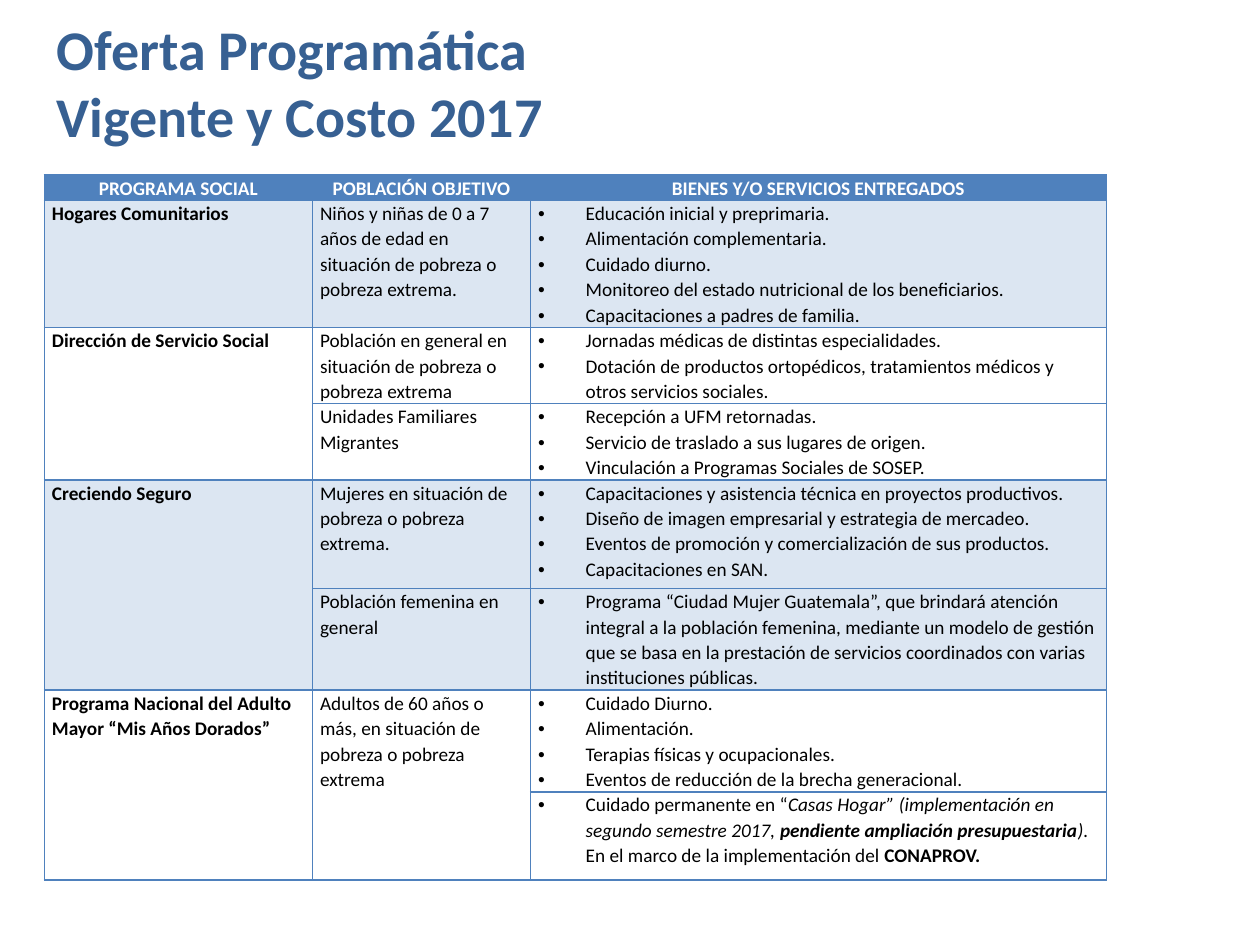
from lxml import etree
from pptx import Presentation
from pptx.dml.color import RGBColor
from pptx.enum.text import MSO_ANCHOR, PP_ALIGN
from pptx.oxml.ns import qn
from pptx.util import Pt

LEFT, CENTER = PP_ALIGN.LEFT, PP_ALIGN.CENTER
TOP, MIDDLE = MSO_ANCHOR.TOP, MSO_ANCHOR.MIDDLE
BLUE, NAVY, PALE, WHITE, BLACK = "4F81BD", "376092", "DCE6F2", "FFFFFF", "000000"
BOLD, ITALIC = {"bold": True}, {"italic": True}


def rgb(value):
    return RGBColor.from_string(value)


class Deck:
    font = "Calibri"
    size = 11
    spacing = 1.07
    indent = 27.2
    border = 1

    def __init__(self, width, height):
        self.prs = Presentation()
        self.prs.slide_width, self.prs.slide_height = Pt(width), Pt(height)
        self.s = self.prs.slides.add_slide(self.prs.slide_layouts[5])

    def run(self, p, text, color, **fmt):
        r = p.add_run()
        r.text = text
        r.font.color.rgb = rgb(color)
        style = {"name": self.font, "size": Pt(self.size), "bold": False, "italic": False}
        for name, value in (style | fmt).items():
            setattr(r.font, name, value)

    def title(self, text, x, y, w, h):
        sp = self.s.shapes.title
        for name, value in {"left": x, "top": y, "width": w, "height": h}.items():
            setattr(sp, name, Pt(value))
        tf = sp.text_frame
        tf.word_wrap, tf.vertical_anchor = True, MIDDLE
        p = tf.paragraphs[0]
        p.alignment = LEFT
        self.run(p, text, NAVY, size=Pt(32), bold=True)

    def bullet(self, p):
        pPr = p._p.get_or_add_pPr()
        pPr.set("marL", str(Pt(self.indent)))
        pPr.set("indent", str(-Pt(self.indent)))
        etree.SubElement(pPr, qn("a:buFont")).set("typeface", "Arial")
        etree.SubElement(pPr, qn("a:buChar")).set("char", "•")

    def borders(self, cell):
        tcPr = cell._tc.get_or_add_tcPr()
        for i, side in enumerate("LRTB"):
            ln = etree.Element(qn("a:ln" + side), w=str(Pt(self.border)))
            fill = etree.SubElement(ln, qn("a:solidFill"))
            etree.SubElement(fill, qn("a:srgbClr")).set("val", BLUE)
            tcPr.insert(i, ln)

    def table(self, x, y, widths, heights):
        shape = self.s.shapes.add_table(len(heights), len(widths), Pt(x), Pt(y),
                                        Pt(sum(widths)), Pt(sum(heights)))
        tbl = shape.table
        tbl.first_row = tbl.horz_banding = False
        for col, w in zip(tbl.columns, widths):
            col.width = Pt(w)
        for row, h in zip(tbl.rows, heights):
            row.height = Pt(h)
        return tbl

    def cell(self, cell, paragraphs, fill, color=BLACK, bold=False,
             align=LEFT, anchor=TOP, bullets=False):
        """Each paragraph is a string or a list of (text, format) runs."""
        cell.fill.solid()
        cell.fill.fore_color.rgb = rgb(fill)
        self.borders(cell)
        cell.margin_left = cell.margin_right = Pt(4.3)
        cell.margin_top = cell.margin_bottom = 0
        cell.vertical_anchor = anchor
        tf = cell.text_frame
        for i, content in enumerate(paragraphs):
            p = tf.add_paragraph() if i else tf.paragraphs[0]
            p.alignment, p.line_spacing = align, self.spacing
            if bullets:
                self.bullet(p)
            runs = [(content, {"bold": bold})] if isinstance(content, str) else content
            for text, fmt in runs:
                self.run(p, text, color, **fmt)


HEADERS = ["PROGRAMA SOCIAL", "POBLACIÓN OBJETIVO", "BIENES Y/O SERVICIOS ENTREGADOS"]

# Each program holds (population, services) rows; None continues the cell above
PROGRAMS = [
    ("Hogares Comunitarios", [
        ("Niños y niñas de 0 a 7 años de edad en situación de pobreza o pobreza extrema.",
         ["Educación inicial y preprimaria.",
          "Alimentación complementaria.",
          "Cuidado diurno.",
          "Monitoreo del estado nutricional de los beneficiarios.",
          "Capacitaciones a padres de familia."])]),
    ("Dirección de Servicio Social", [
        ("Población en general en situación de pobreza o pobreza extrema",
         ["Jornadas médicas de distintas especialidades.",
          "Dotación de productos ortopédicos, tratamientos médicos y otros servicios sociales."]),
        ("Unidades Familiares Migrantes",
         ["Recepción a UFM retornadas.",
          "Servicio de traslado a sus lugares de origen.",
          "Vinculación a Programas Sociales de SOSEP."])]),
    ("Creciendo Seguro", [
        ("Mujeres en situación de pobreza o pobreza extrema.",
         ["Capacitaciones y asistencia técnica en proyectos productivos.",
          "Diseño de imagen empresarial y estrategia de mercadeo.",
          "Eventos de promoción y comercialización de sus productos.",
          "Capacitaciones en SAN."]),
        ("Población femenina en general",
         ["Programa “Ciudad Mujer Guatemala”, que brindará atención integral a la población "
          "femenina, mediante un modelo de gestión que se basa en la prestación de servicios "
          "coordinados con varias instituciones públicas."])]),
    ("Programa Nacional del Adulto Mayor “Mis Años Dorados”", [
        ("Adultos de 60 años o más, en situación de pobreza o pobreza extrema",
         ["Cuidado Diurno.",
          "Alimentación.",
          "Terapias físicas y ocupacionales.",
          "Eventos de reducción de la brecha generacional."]),
        (None,
         [[("Cuidado permanente en “", {}),
           ("Casas Hogar” (implementación en segundo semestre 2017, ", ITALIC),
           ("pendiente ampliación presupuestaria", BOLD | ITALIC),
           ("). ", ITALIC),
           ("En el marco de la implementación del ", {}),
           ("CONAPROV.", BOLD)]])]),
]


def main():
    deck = Deck(720, 540)
    deck.title("Oferta Programática Vigente y Costo 2017", 25.2, 5, 375, 83.5)

    # Table grid and header row
    tbl = deck.table(25.4, 100, [153.2, 124.6, 329],
                     [13.7, 71.3, 42.5, 42.5, 62, 57, 55.5, 50.5])
    for c, text in enumerate(HEADERS):
        deck.cell(tbl.cell(0, c), [text], BLUE, WHITE, True, CENTER, MIDDLE)

    # Program rows, banded by program
    row = 1
    for i, (program, groups) in enumerate(PROGRAMS):
        fill = WHITE if i % 2 else PALE
        last = row + len(groups) - 1
        if last > row:
            tbl.cell(row, 0).merge(tbl.cell(last, 0))
        for k, (population, services) in enumerate(groups):
            r = row + k
            if population is None:
                tbl.cell(r - 1, 1).merge(tbl.cell(r, 1))
            deck.cell(tbl.cell(r, 0), [] if k else [program], fill, bold=True)
            deck.cell(tbl.cell(r, 1), [population] if population else [], fill)
            deck.cell(tbl.cell(r, 2), services, fill, bullets=True)
        row = last + 1

    deck.prs.save("out.pptx")


if __name__ == "__main__":
    main()
